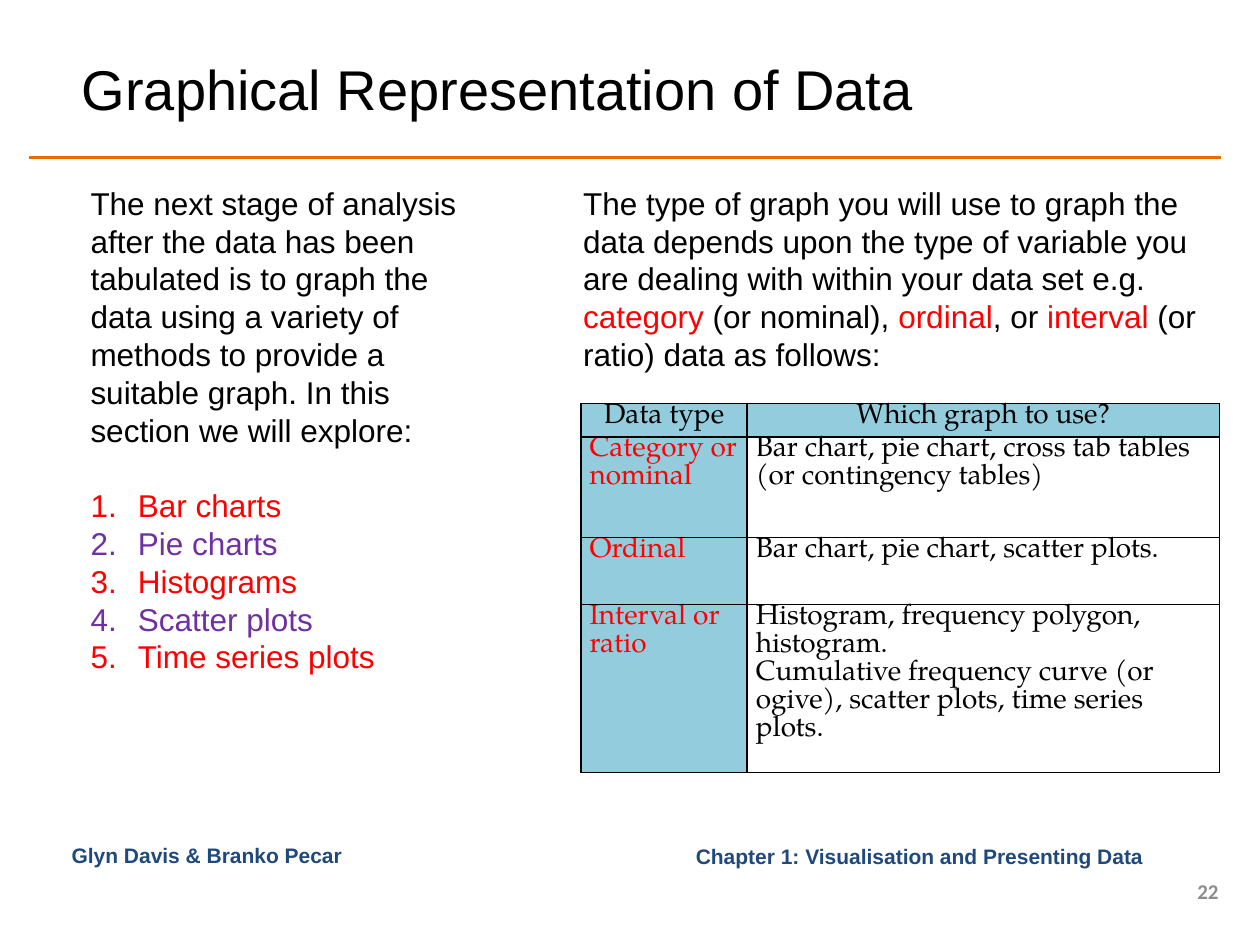
import pptx
import pptx.dml.color
import pptx.enum.shapes
import pptx.enum.text
import pptx.oxml
import pptx.oxml.ns
import pptx.util

RGBColor = pptx.dml.color.RGBColor
BLACK = RGBColor(0x00, 0x00, 0x00)
RED = RGBColor(0xFF, 0x00, 0x00)
PURPLE = RGBColor(0x70, 0x30, 0xA0)
ORANGE = RGBColor(0xE4, 0x6C, 0x0A)
NAVY = RGBColor(0x1F, 0x49, 0x7D)
GREY = RGBColor(0x8C, 0x8C, 0x8C)
AQUA = RGBColor(0x93, 0xCD, 0xDD)
LEFT = pptx.enum.text.PP_ALIGN.LEFT
CENTER = pptx.enum.text.PP_ALIGN.CENTER
RIGHT = pptx.enum.text.PP_ALIGN.RIGHT
TOP = pptx.enum.text.MSO_ANCHOR.TOP
MIDDLE = pptx.enum.text.MSO_ANCHOR.MIDDLE

presentation = pptx.Presentation()
presentation.slide_width = pptx.util.Inches(10)
presentation.slide_height = pptx.util.Inches(7.5)
slide = presentation.slides.add_slide(presentation.slide_layouts[6])
column = presentation.slide_width / 100
row = presentation.slide_height / 100


def write(frame, *runs, size=18, font="Arial", color=BLACK, bold=False, align=LEFT, spacing=None):
    paragraph = frame.paragraphs[0]
    if paragraph.runs:
        paragraph = frame.add_paragraph()
    paragraph.alignment = align
    if spacing:
        paragraph.line_spacing = pptx.util.Pt(spacing)
    for item in runs:
        text, run_color = item if isinstance(item, tuple) else (item, color)
        run = paragraph.add_run()
        run.text = text
        run.font.name = font
        run.font.size = pptx.util.Pt(size)
        run.font.bold = bold
        run.font.color.rgb = run_color
    return paragraph


def text_frame(x, y, width, height, anchor=TOP):
    box = slide.shapes.add_textbox(
        int(x * column), int(y * row), int(width * column), int(height * row))
    box.text_frame.word_wrap = True
    box.text_frame.vertical_anchor = anchor
    return box.text_frame


rule = slide.shapes.add_connector(
    pptx.enum.shapes.MSO_CONNECTOR.STRAIGHT,
    int(2.3 * column), int(16.67 * row), int(96.9 * column), int(16.67 * row))
rule.line.color.rgb = ORANGE
rule.line.width = pptx.util.Pt(2)
rule.element.spPr.append(pptx.oxml.parse_xml(
    f'<a:effectLst {pptx.oxml.ns.nsdecls("a")}/>'))

write(text_frame(5.5, 4.13, 75.8, 10.4, MIDDLE), "Graphical Representation of Data", size=32)
write(text_frame(4.7, 88.53, 29.7, 4.13), "Glyn Davis & Branko Pecar",
      size=12, color=NAVY, bold=True)
write(text_frame(46.9, 88.53, 45.3, 4.13, MIDDLE),
      "Chapter 1: Visualisation and Presenting Data ",
      size=12, color=NAVY, bold=True, align=RIGHT)
write(text_frame(93, 92.67, 4.7, 3.2, MIDDLE), "22",
      size=12, font="Calibri", color=GREY, bold=True, align=RIGHT)

overview = text_frame(6.2, 18.8, 31.2, 53.87)
write(overview,
      "The next stage of analysis after the data has been tabulated is to graph the data "
      "using a variety of methods to provide a suitable graph. In this section we will explore:",
      spacing=21.6)
charts = ["Bar charts", "Pie charts", "Histograms", "Scatter plots", "Time series plots"]
for index, chart in enumerate(charts):
    paragraph = write(overview, chart, color=(RED, PURPLE)[index % 2], spacing=21.6)
    if index == 0:
        paragraph.space_before = pptx.util.Pt(21.6)
    properties = paragraph._p.get_or_add_pPr()
    properties.set("marL", str(int(3.75 * column)))
    properties.set("indent", str(int(-3.75 * column)))
    properties.append(pptx.oxml.parse_xml(
        f'<a:buFont {pptx.oxml.ns.nsdecls("a")} typeface="+mj-lt"/>'))
    properties.append(pptx.oxml.parse_xml(
        f'<a:buAutoNum {pptx.oxml.ns.nsdecls("a")} type="arabicPeriod"/>'))

write(text_frame(45.3, 18.8, 51.6, 21.6),
      "The type of graph you will use to graph the data depends upon the type of variable "
      "you are dealing with within your data set e.g. ",
      ("category", RED), " (or nominal), ", ("ordinal", RED), ", or ", ("interval", RED),
      " (or ratio) data as follows:", spacing=21.6)

graph_choices = [
    ("Data type", ["Which graph to use?"]),
    ("Category or nominal", ["Bar chart, pie chart, cross tab tables (or contingency tables)"]),
    ("Ordinal", ["Bar chart, pie chart, scatter plots."]),
    ("Interval or ratio", [
        "Histogram, frequency polygon, histogram.",
        "Cumulative frequency curve (or ogive), scatter plots, time series plots."]),
]
column_widths = [13.2, 37.5]
row_heights = [3.55, 10.67, 7.1, 17.75]
table = slide.shapes.add_table(
    len(row_heights), len(column_widths), int(46.1 * column), int(42.67 * row),
    int(sum(column_widths) * column), int(sum(row_heights) * row)).table
table.first_row = False
table.horz_banding = False
for table_column, width in zip(table.columns, column_widths):
    table_column.width = int(width * column)

for row_index, (data_type, graphs) in enumerate(graph_choices):
    table.rows[row_index].height = int(row_heights[row_index] * row)
    for column_index, lines in enumerate(([data_type], graphs)):
        cell = table.cell(row_index, column_index)
        cell.margin_left = cell.margin_right = pptx.util.Inches(0.07)
        cell.margin_top = cell.margin_bottom = 0
        is_header = row_index == 0
        for line in lines:
            write(cell.text_frame, line, size=16, font="TeX Gyre Pagella",
                  color=BLACK if is_header or column_index else RED,
                  align=CENTER if is_header else LEFT, spacing=16)
        cell_properties = cell._tc.get_or_add_tcPr()
        for side in ("lnL", "lnR", "lnT", "lnB"):
            cell_properties.append(pptx.oxml.parse_xml(
                f'<a:{side} {pptx.oxml.ns.nsdecls("a")} w="{pptx.util.Pt(1)}">'
                f'<a:solidFill><a:srgbClr val="{BLACK}"/></a:solidFill></a:{side}>'))
        if is_header or column_index == 0:
            cell.fill.solid()
            cell.fill.fore_color.rgb = AQUA
        else:
            cell.fill.background()

presentation.save("out.pptx")
